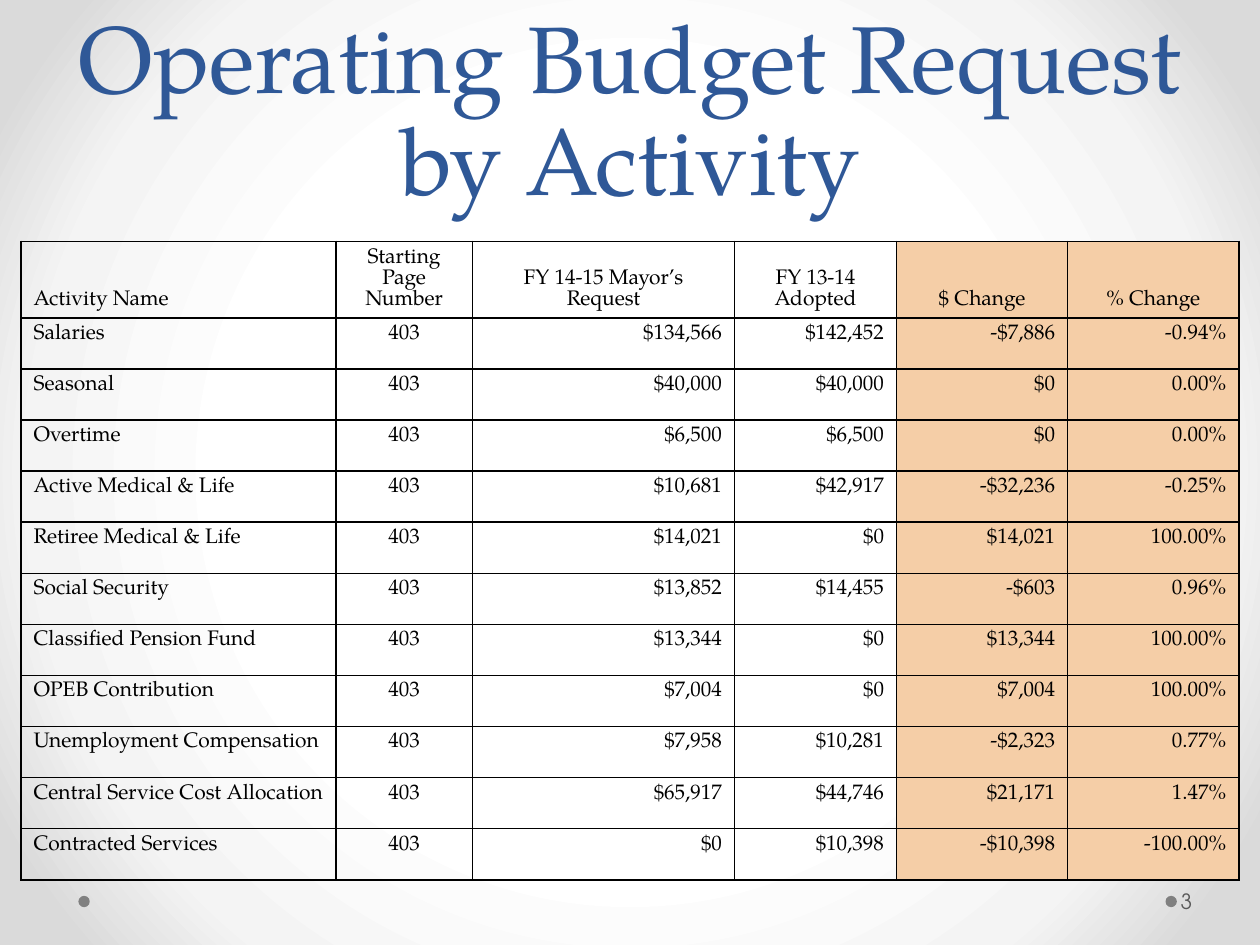
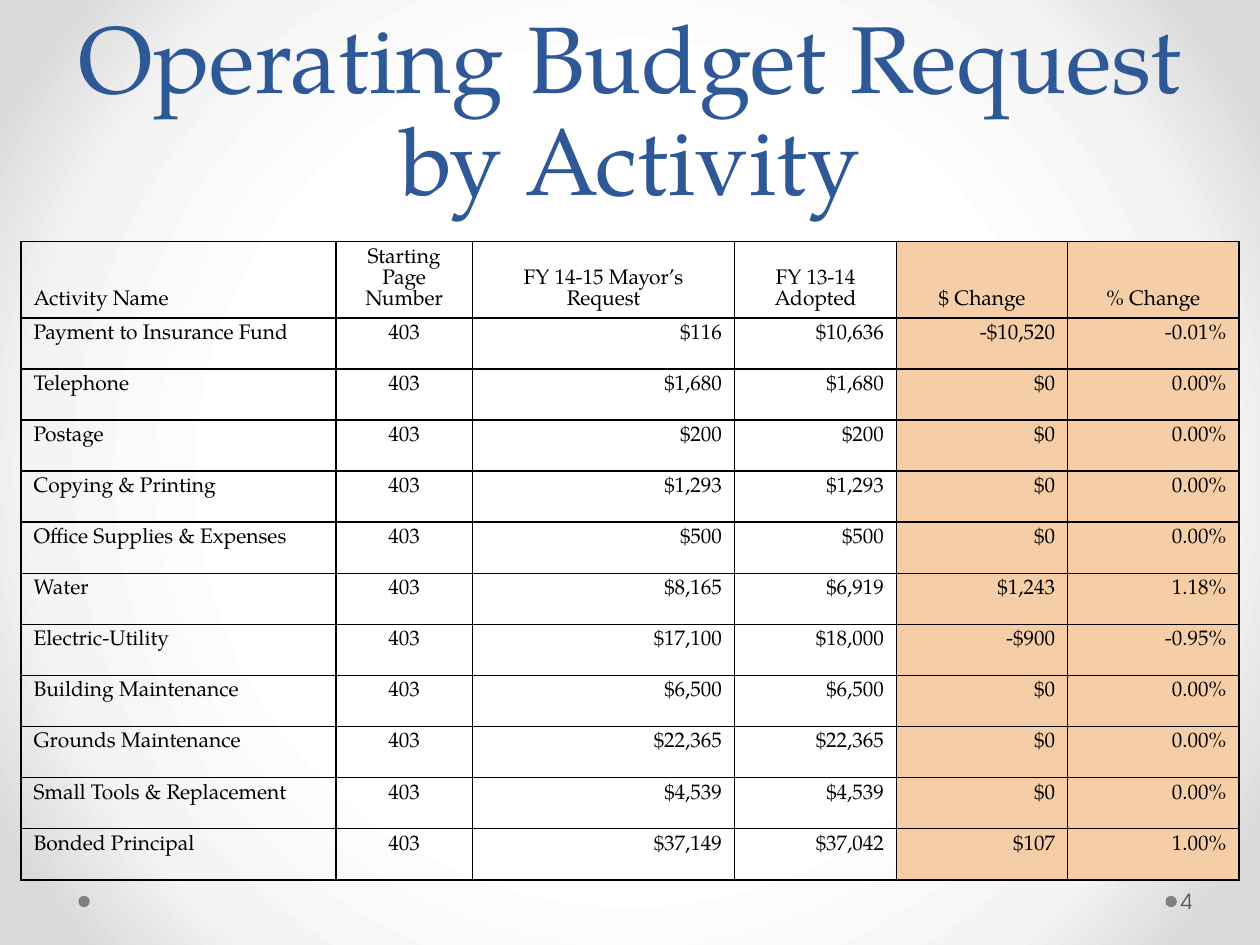
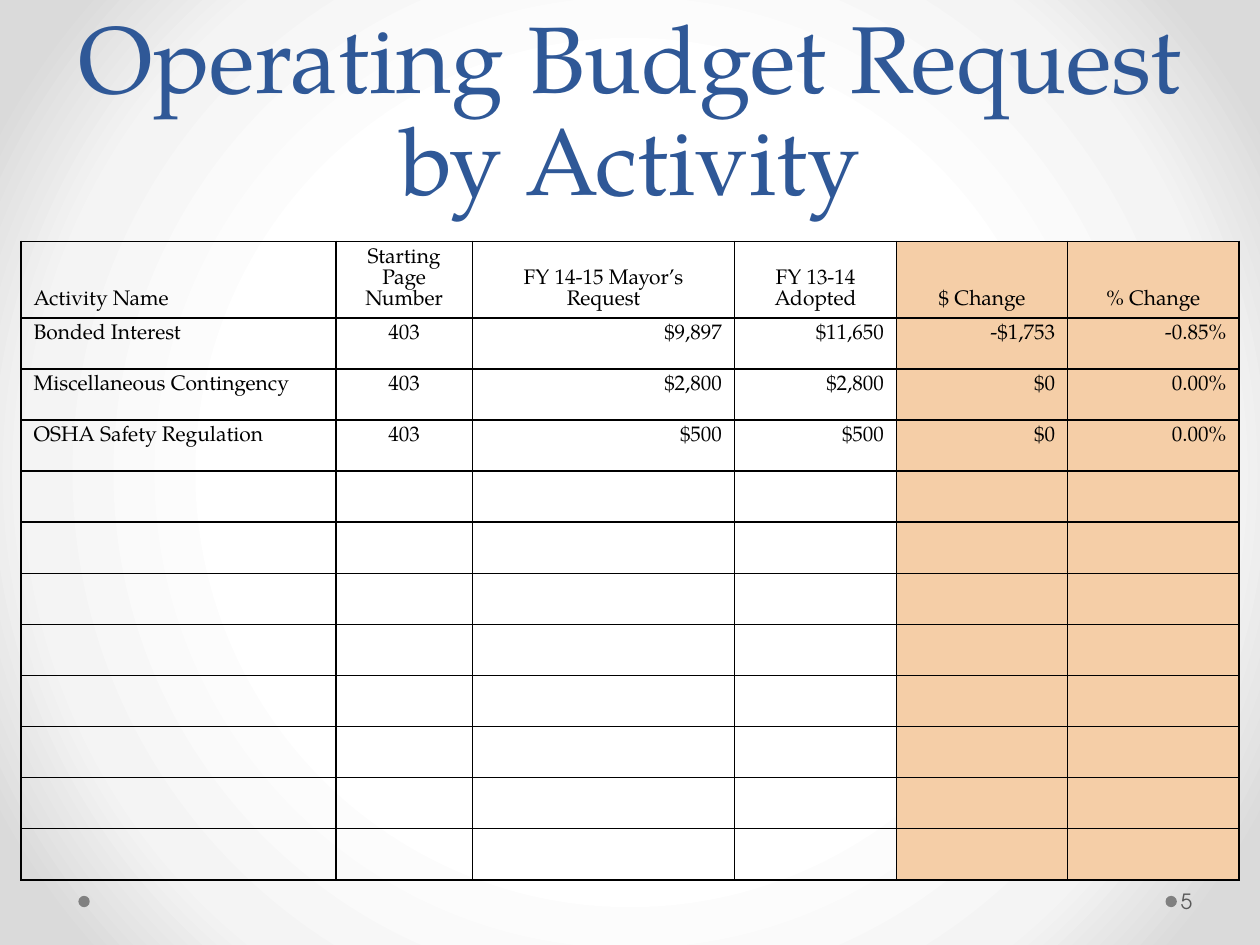
from lxml import etree
from pptx import Presentation
from pptx.dml.color import RGBColor
from pptx.enum.shapes import MSO_SHAPE
from pptx.enum.text import MSO_ANCHOR, PP_ALIGN
from pptx.oxml.ns import qn
from pptx.util import Pt

LEFT, CENTER, RIGHT = PP_ALIGN.LEFT, PP_ALIGN.CENTER, PP_ALIGN.RIGHT
TOP, MIDDLE, BOTTOM = MSO_ANCHOR.TOP, MSO_ANCHOR.MIDDLE, MSO_ANCHOR.BOTTOM
ELLIPSE = MSO_SHAPE.OVAL

COLORS = {
    "title": "2F5897",
    "text": "000000",
    "border": "000000",
    "change": "F5CEA7",
    "dot": "808080",
    "number": "595959",
}
BACKGROUND_STOPS = ((50, "FFFFFF"), (76, "F4F4F4"), (92, "DADADA"))
SERIF, SANS = "TeX Gyre Pagella", "TeX Gyre Adventor"

# Table layout
TITLE = "Operating Budget Request by Activity"
HEADERS = ("Activity Name", "Starting Page Number", "FY 14-15 Mayor’s Request",
           "FY 13-14 Adopted", "$ Change", "% Change")
COLUMN_WIDTHS = (180, 78, 149.8, 92.6, 97.8, 97.8)
COLUMN_ALIGNMENTS = (LEFT, CENTER, RIGHT, RIGHT, RIGHT, RIGHT)
FIRST_CHANGE_COLUMN = 4
BODY_ROWS = 11
HEADER_HEIGHT, ROW_HEIGHT = 43.6, 29.22
STARTING_PAGE = "403"
FIRST_SLIDE_NUMBER = 3

# Activity, mayor's request, adopted, dollar change, percent change
BUDGET_SLIDES = (
    (
        ("Salaries", "$134,566", "$142,452", "-$7,886", "-0.94%"),
        ("Seasonal", "$40,000", "$40,000", "$0", "0.00%"),
        ("Overtime", "$6,500", "$6,500", "$0", "0.00%"),
        ("Active Medical & Life", "$10,681", "$42,917", "-$32,236", "-0.25%"),
        ("Retiree Medical & Life", "$14,021", "$0", "$14,021", "100.00%"),
        ("Social Security", "$13,852", "$14,455", "-$603", "0.96%"),
        ("Classified Pension Fund", "$13,344", "$0", "$13,344", "100.00%"),
        ("OPEB Contribution", "$7,004", "$0", "$7,004", "100.00%"),
        ("Unemployment Compensation", "$7,958", "$10,281", "-$2,323", "0.77%"),
        ("Central Service Cost Allocation", "$65,917", "$44,746", "$21,171", "1.47%"),
        ("Contracted Services", "$0", "$10,398", "-$10,398", "-100.00%"),
    ),
    (
        ("Payment to Insurance Fund", "$116", "$10,636", "-$10,520", "-0.01%"),
        ("Telephone", "$1,680", "$1,680", "$0", "0.00%"),
        ("Postage", "$200", "$200", "$0", "0.00%"),
        ("Copying & Printing", "$1,293", "$1,293", "$0", "0.00%"),
        ("Office Supplies & Expenses", "$500", "$500", "$0", "0.00%"),
        ("Water", "$8,165", "$6,919", "$1,243", "1.18%"),
        ("Electric-Utility", "$17,100", "$18,000", "-$900", "-0.95%"),
        ("Building Maintenance", "$6,500", "$6,500", "$0", "0.00%"),
        ("Grounds Maintenance", "$22,365", "$22,365", "$0", "0.00%"),
        ("Small Tools & Replacement", "$4,539", "$4,539", "$0", "0.00%"),
        ("Bonded Principal", "$37,149", "$37,042", "$107", "1.00%"),
    ),
    (
        ("Bonded Interest", "$9,897", "$11,650", "-$1,753", "-0.85%"),
        ("Miscellaneous Contingency", "$2,800", "$2,800", "$0", "0.00%"),
        ("OSHA Safety Regulation", "$500", "$500", "$0", "0.00%"),
    ),
)


def rgb(name):
    return RGBColor.from_string(COLORS[name])


class BudgetDeck:
    """Holds the shared style and the slide being built."""

    def __init__(self):
        self.presentation = Presentation()
        self.presentation.slide_width = Pt(720)
        self.presentation.slide_height = Pt(540)
        self.slide = None

    def new_slide(self):
        self.slide = self.presentation.slides.add_slide(self.presentation.slide_layouts[6])
        self.background()
        for left in (666, 44.8):
            self.dot(left, 511.9)

    def background(self):
        self.slide.background.fill.gradient()
        gradient = self.slide.element.find(".//" + qn("a:gradFill"))
        gradient.clear()
        stops = etree.SubElement(gradient, qn("a:gsLst"))
        for position, color in BACKGROUND_STOPS:
            stop = etree.SubElement(stops, qn("a:gs"), pos=str(position * 1000))
            etree.SubElement(stop, qn("a:srgbClr"), val=color)
        circle = etree.SubElement(gradient, qn("a:path"), path="circle")
        etree.SubElement(circle, qn("a:fillToRect"), l="50000", t="50000", r="50000", b="50000")

    def dot(self, left, top):
        shape = self.slide.shapes.add_shape(ELLIPSE, Pt(left), Pt(top), Pt(6.5), Pt(6.5))
        shape.shadow.inherit = False
        shape.fill.solid()
        shape.fill.fore_color.rgb = rgb("dot")
        shape.line.fill.background()

    def style(self, paragraph, size, font, color, alignment=LEFT, spacing=None):
        paragraph.alignment = alignment
        if spacing:
            paragraph.line_spacing = Pt(spacing)
        paragraph.font.size = Pt(size)
        paragraph.font.name = font
        paragraph.font.color.rgb = rgb(color)

    def text_box(self, text, left, top, width, height, anchor):
        shape = self.slide.shapes.add_textbox(Pt(left), Pt(top), Pt(width), Pt(height))
        frame = shape.text_frame
        frame.word_wrap = True
        frame.vertical_anchor = anchor
        frame.text = text
        return frame

    def title(self, text):
        frame = self.text_box(text, 36, 0, 648, 126, BOTTOM)
        self.style(frame.paragraphs[0], 54, SERIF, "title", CENTER, 58)

    def slide_number(self, number):
        frame = self.text_box(str(number), 672.5, 500.4, 44, 28.8, MIDDLE)
        frame.margin_left, frame.margin_right = Pt(2.2), Pt(3.6)
        self.style(frame.paragraphs[0], 12, SANS, "number")

    def cell(self, cell, text, alignment, anchor, shaded):
        # Fill first, so that the borders can be placed before it
        if shaded:
            cell.fill.solid()
            cell.fill.fore_color.rgb = rgb("change")
        else:
            cell.fill.background()
        cell.text = text
        cell.vertical_anchor = anchor
        self.style(cell.text_frame.paragraphs[0], 12, SERIF, "text", alignment, 12)
        properties = cell._tc.get_or_add_tcPr()
        for index, side in enumerate(("a:lnL", "a:lnR", "a:lnT", "a:lnB")):
            line = etree.Element(qn(side), w=str(Pt(1)))
            solid = etree.SubElement(line, qn("a:solidFill"))
            etree.SubElement(solid, qn("a:srgbClr"), val=COLORS["border"])
            properties.insert(index, line)

    def budget_table(self, activities):
        rows = [HEADERS]
        rows += [(name, STARTING_PAGE, *amounts) for name, *amounts in activities]
        rows += [("",) * len(HEADERS)] * (BODY_ROWS - len(activities))
        height = HEADER_HEIGHT + BODY_ROWS * ROW_HEIGHT
        table = self.slide.shapes.add_table(
            len(rows), len(HEADERS), Pt(12), Pt(138), Pt(sum(COLUMN_WIDTHS)), Pt(height)).table
        table.first_row = table.horz_banding = False
        for column, width in zip(table.columns, COLUMN_WIDTHS):
            column.width = Pt(width)
        for row_index, values in enumerate(rows):
            header = row_index == 0
            table.rows[row_index].height = Pt(HEADER_HEIGHT if header else ROW_HEIGHT)
            for column_index, text in enumerate(values):
                alignment = COLUMN_ALIGNMENTS[column_index]
                if header and column_index > 0:
                    alignment = CENTER
                self.cell(table.cell(row_index, column_index), text, alignment,
                          BOTTOM if header else TOP, column_index >= FIRST_CHANGE_COLUMN)


def main():
    deck = BudgetDeck()
    for number, activities in enumerate(BUDGET_SLIDES, FIRST_SLIDE_NUMBER):
        deck.new_slide()
        deck.title(TITLE)
        deck.budget_table(activities)
        deck.slide_number(number)
    deck.presentation.save("out.pptx")


if __name__ == "__main__":
    main()
